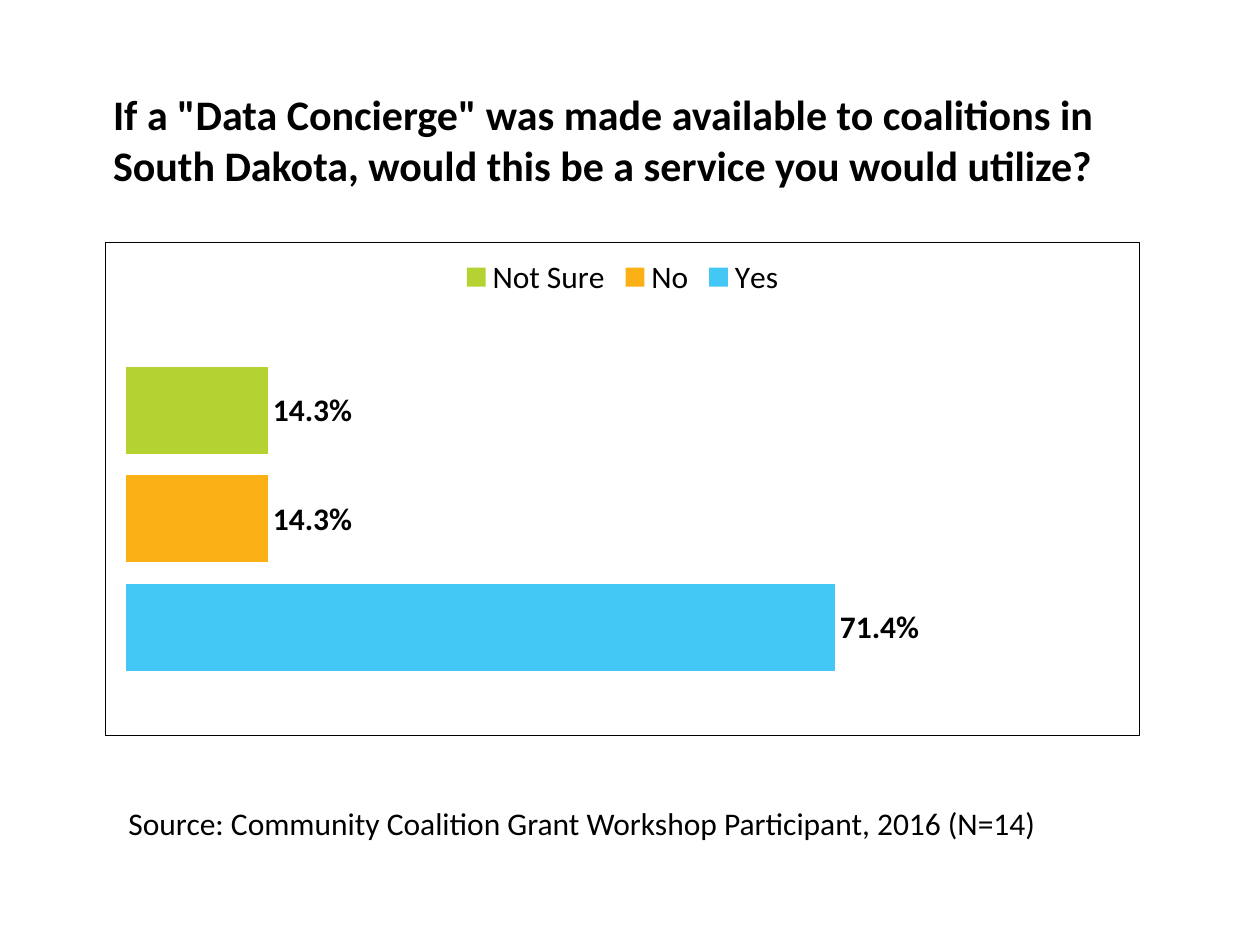
import lxml.etree
import pptx
import pptx.chart.data
import pptx.dml.color
import pptx.enum.chart
import pptx.enum.text
import pptx.oxml
import pptx.oxml.ns
import pptx.util

Cm = pptx.util.Cm
Pt = pptx.util.Pt

COLORS = {
    "text": "000000",
    "border": "000000",
    "Yes": "43C7F4",
    "No": "FBB116",
    "Not Sure": "B4D333",
}
ANSWERS = {"Yes": 0.714, "No": 0.143, "Not Sure": 0.143}


class SlideBuilder:
    font_name = "Calibri"
    body_size = 18
    percent_format = "0.0%"

    def __init__(self, slide):
        self.slide = slide

    def style_font(self, font, size, bold=False):
        font.name = self.font_name
        font.size = Pt(size)
        font.bold = bold
        font.color.rgb = pptx.dml.color.RGBColor.from_string(COLORS["text"])

    def add_text(self, text, left, top, width, height, size=body_size, bold=False,
                 anchor=pptx.enum.text.MSO_ANCHOR.TOP):
        shape = self.slide.shapes.add_textbox(Cm(left), Cm(top), Cm(width), Cm(height))
        frame = shape.text_frame
        frame.word_wrap = True
        frame.vertical_anchor = anchor
        paragraph = frame.paragraphs[0]
        paragraph.text = text
        self.style_font(paragraph.font, size, bold)

    def add_bar_chart(self, answers, left, top, width, height):
        data = pptx.chart.data.CategoryChartData(number_format=self.percent_format)
        data.categories = ["1"]
        for name, value in answers.items():
            data.add_series(name, [value])
        chart = self.slide.shapes.add_chart(
            pptx.enum.chart.XL_CHART_TYPE.BAR_CLUSTERED,
            Cm(left), Cm(top), Cm(width), Cm(height), data).chart
        self.style_font(chart.font, self.body_size)
        chart.has_title = False
        chart.has_legend = True
        chart.legend.position = pptx.enum.chart.XL_LEGEND_POSITION.TOP
        chart.legend.include_in_layout = False
        chart.category_axis.visible = False
        value_axis = chart.value_axis
        value_axis.visible = False
        value_axis.has_major_gridlines = False
        value_axis.minimum_scale = 0
        value_axis.maximum_scale = 1
        plot = chart.plots[0]
        plot.vary_by_categories = False
        plot.gap_width = 125
        plot.overlap = -25
        for series in plot.series:
            self.style_series(series)
        self.add_chart_border(chart)

    def style_series(self, series):
        series.format.fill.solid()
        series.format.fill.fore_color.rgb = pptx.dml.color.RGBColor.from_string(COLORS[series.name])
        labels = series.data_labels
        labels.show_value = True
        labels.number_format = self.percent_format
        labels.number_format_is_linked = False
        labels.position = pptx.enum.chart.XL_LABEL_POSITION.OUTSIDE_END
        self.style_font(labels.font, self.body_size, bold=True)

    def add_chart_border(self, chart):
        namespaces = pptx.oxml.ns.nsdecls("c", "a")
        border = pptx.oxml.parse_xml(
            f'<c:spPr {namespaces}><a:noFill/><a:ln w="{Pt(0.75)}"><a:solidFill>'
            f'<a:srgbClr val="{COLORS["border"]}"/></a:solidFill></a:ln></c:spPr>')
        chart.element.find(pptx.oxml.ns.qn("c:chart")).addnext(border)


def main():
    presentation = pptx.Presentation()
    presentation.slide_width = Cm(25.4)
    presentation.slide_height = Cm(19.05)
    builder = SlideBuilder(presentation.slides.add_slide(presentation.slide_layouts[6]))
    builder.add_text(
        'If a "Data Concierge" was made available to coalitions in South Dakota, '
        "would this be a service you would utilize?",
        2.03, 1.22, 21.69, 3.18, size=24, bold=True,
        anchor=pptx.enum.text.MSO_ANCHOR.MIDDLE)
    builder.add_bar_chart(ANSWERS, 2.11, 4.88, 20.88, 9.96)
    builder.add_text(
        "Source: Community Coalition Grant Workshop Participant, 2016 (N=14)",
        2.34, 16.08, 19.05, 1.02)
    presentation.save("out.pptx")


if __name__ == "__main__":
    main()
